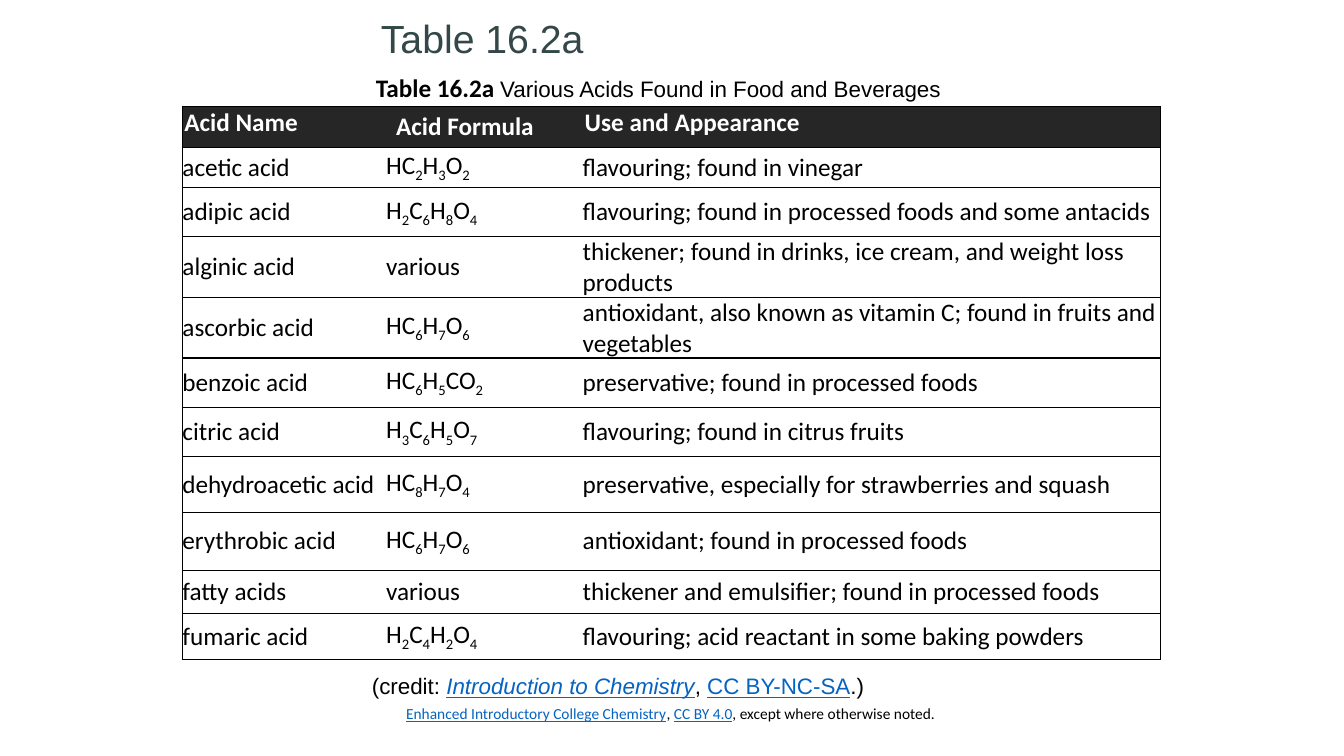
from itertools import groupby

from lxml import etree
from pptx import Presentation
from pptx.dml.color import RGBColor
from pptx.enum.text import MSO_ANCHOR
from pptx.oxml.ns import qn
from pptx.util import Inches, Pt

TOP, MIDDLE, BOTTOM = MSO_ANCHOR.TOP, MSO_ANCHOR.MIDDLE, MSO_ANCHOR.BOTTOM

COLORS = {
    "title": "354849",
    "text": "000000",
    "link": "0563C1",
    "header": "262626",
    "paper": "FFFFFF",
}

TITLE = "Table 16.2a"
CAPTION = [("Table 16.2a ", "label"), ("Various Acids Found in Food and Beverages", "")]
CREDIT = [
    ("(credit: ", ""),
    ("Introduction to Chemistry", "link italic"),
    (", ", ""),
    ("CC BY-NC-SA", "link"),
    (".)", ""),
]
FOOTER = [
    ("Enhanced Introductory College Chemistry", "link"),
    (", ", ""),
    ("CC BY 4.0", "link"),
    (", except where otherwise noted.", ""),
]

HEADINGS = ("Acid Name", "Acid Formula", "Use and Appearance")
ACIDS = [
    ("acetic acid", "HC2H3O2", "flavouring; found in vinegar"),
    ("adipic acid", "H2C6H8O4", "flavouring; found in processed foods and some antacids"),
    ("alginic acid", "various", "thickener; found in drinks, ice cream, and weight loss products"),
    ("ascorbic acid", "HC6H7O6",
     "antioxidant, also known as vitamin C; found in fruits and vegetables"),
    ("benzoic acid", "HC6H5CO2", "preservative; found in processed foods"),
    ("citric acid", "H3C6H5O7", "flavouring; found in citrus fruits"),
    ("dehydroacetic acid", "HC8H7O4", "preservative, especially for strawberries and squash"),
    ("erythrobic acid", "HC6H7O6", "antioxidant; found in processed foods"),
    ("fatty acids", "various", "thickener and emulsifier; found in processed foods"),
    ("fumaric acid", "H2C4H2O4", "flavouring; acid reactant in some baking powders"),
]
COLUMN_WIDTHS = (2.02, 1.95, 5.73)
ROW_HEIGHTS = (0.4, 0.4, 0.49, 0.6, 0.6, 0.49, 0.49, 0.55, 0.58, 0.43, 0.45)


def rgb(name):
    return RGBColor.from_string(COLORS[name])


def style(font, size, face, color):
    font.size, font.name = Pt(size), face
    font.color.rgb = rgb(color)


def add_line(slide, place, pieces, size, face, color="text", anchor=TOP):
    """Add a one-line text box from (text, marks) pieces."""
    frame = slide.shapes.add_textbox(*map(Inches, place)).text_frame
    frame.word_wrap = True
    frame.vertical_anchor = anchor
    line = frame.paragraphs[0]
    style(line.font, size, face, color)
    for text, marks in pieces:
        run = line.add_run()
        run.text = text
        if "link" in marks:
            run.font.color.rgb = rgb("link")
            run.font.underline = True
        if "italic" in marks:
            run.font.italic = True
        if marks == "label":
            run.font.size, run.font.name, run.font.bold = Pt(18), "Calibri", True


def set_borders(cell, sides):
    """Rule the given sides (letters of LRTB) and clear the others."""
    properties = cell._tc.get_or_add_tcPr()
    for side in "LRTB":
        line = etree.SubElement(properties, qn(f"a:ln{side}"), w=str(Pt(1)))
        if side in sides:
            fill = etree.SubElement(line, qn("a:solidFill"))
            etree.SubElement(fill, qn("a:srgbClr"), val=COLORS["text"])
        else:
            etree.SubElement(line, qn("a:noFill"))


def set_margins(cell, across, down):
    cell.margin_left = cell.margin_right = Inches(across)
    cell.margin_top = cell.margin_bottom = Inches(down)


def write_formula(paragraph, formula):
    """Write each group of digits as a subscript."""
    for is_digit, letters in groupby(formula, str.isdigit):
        run = paragraph.add_run()
        run.text = "".join(letters)
        if is_digit:
            run._r.get_or_add_rPr().set("baseline", "-25000")


def fill_cell(cell, text, row, column):
    is_header, is_formula = row == 0, column == 1
    set_borders(cell, ("LTB", "TB", "RTB")[column])
    cell.fill.solid()
    cell.fill.fore_color.rgb = rgb("header" if is_header else "paper")
    cell.vertical_anchor = TOP if is_header and not is_formula else MIDDLE
    if not is_header:
        set_margins(cell, 0, 0)
    elif not is_formula:
        set_margins(cell, 0.02, 0.01)
    paragraph = cell.text_frame.paragraphs[0]
    style(paragraph.font, 18, "Calibri", "paper" if is_header else "text")
    paragraph.font.bold = is_header
    if is_formula and not is_header:
        write_formula(paragraph, text)
    else:
        paragraph.add_run().text = text


def add_acid_table(slide):
    rows = [HEADINGS, *ACIDS]
    place = (1.81, 1.06, sum(COLUMN_WIDTHS), sum(ROW_HEIGHTS))
    table = slide.shapes.add_table(len(rows), len(HEADINGS), *map(Inches, place)).table
    table.first_row = table.horz_banding = False
    for column, width in zip(table.columns, COLUMN_WIDTHS):
        column.width = Inches(width)
    for r, (texts, height) in enumerate(zip(rows, ROW_HEIGHTS)):
        table.rows[r].height = Inches(height)
        for c, text in enumerate(texts):
            fill_cell(table.cell(r, c), text, r, c)


def main():
    deck = Presentation()
    deck.slide_width, deck.slide_height = Inches(13.33), Inches(7.5)
    slide = deck.slides.add_slide(deck.slide_layouts[6])
    add_line(slide, (3.93, 6.94, 7.07, 0.4), FOOTER, 11, "Calibri")
    add_line(slide, (3.68, -0.04, 2.27, 0.7), [(TITLE, "")], 28, "Arial", "title", BOTTOM)
    add_line(slide, (3.63, 0.67, 8.11, 0.4), CAPTION, 16, "Arial")
    add_acid_table(slide)
    add_line(slide, (3.59, 6.62, 5.27, 0.37), CREDIT, 16, "Arial")
    deck.save("out.pptx")


if __name__ == "__main__":
    main()
